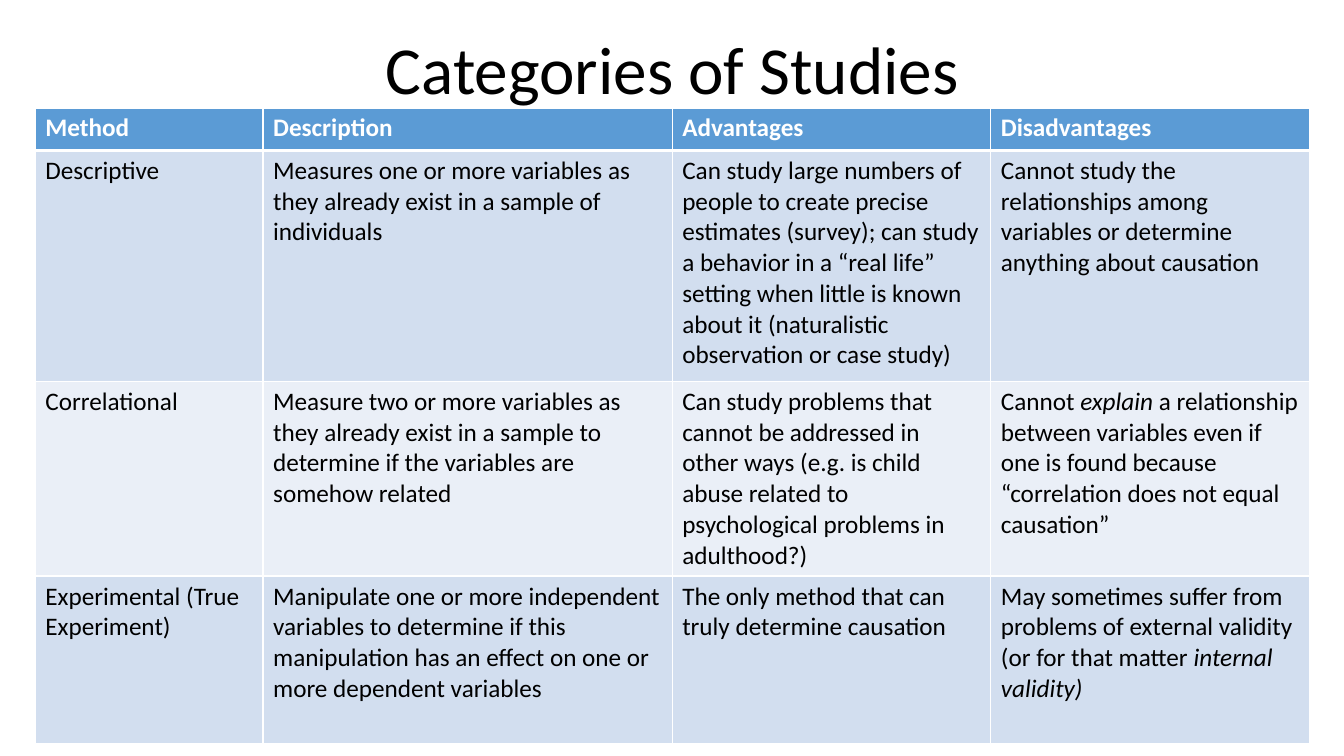
from pptx import Presentation
from pptx.dml.color import RGBColor
from pptx.enum.text import MSO_ANCHOR, MSO_AUTO_SIZE, PP_ALIGN
from pptx.oxml.ns import qn
from pptx.util import Cm, Pt
from lxml import etree

CENTER = PP_ALIGN.CENTER
MIDDLE = MSO_ANCHOR.MIDDLE
NO_AUTOFIT = MSO_AUTO_SIZE.NONE
TITLE_ONLY = 5

COLORS = {
    "text": "000000",
    "white": "FFFFFF",
    "header": "5B9BD5",
    "band_dark": "D2DEEF",
    "band_light": "EAEFF7",
}
COLUMN_WIDTHS = [5.74, 10.31, 8.03, 8.03]
ROW_HEIGHTS = [1.07, 5.82, 4.6, 4.22]
ITALIC_MARK = "*"
STUDIES = [
    ["Method", "Description", "Advantages", "Disadvantages"],
    [
        "Descriptive",
        "Measures one or more variables as they already exist in a sample of individuals",
        "Can study large numbers of people to create precise estimates (survey); "
        "can study a behavior in a “real life” setting when little is known about it "
        "(naturalistic observation or case study)",
        "Cannot study the relationships among variables or determine anything about causation",
    ],
    [
        "Correlational",
        "Measure two or more variables as they already exist in a sample "
        "to determine if the variables are somehow related",
        "Can study problems that cannot be addressed in other ways "
        "(e.g. is child abuse related to psychological problems in adulthood?)",
        "Cannot *explain* a relationship between variables even if one is found "
        "because “correlation does not equal causation”",
    ],
    [
        "Experimental (True Experiment)",
        "Manipulate one or more independent variables to determine if this manipulation "
        "has an effect on one or more dependent variables",
        "The only method that can truly determine causation",
        "May sometimes suffer from problems of external validity "
        "(or for that matter *internal validity)*",
    ],
]


class SlideBuilder:
    def __init__(self, slide, font="Calibri"):
        self.slide = slide
        self.font = font

    def style_span(self, span, size, color, bold=False, italic=False):
        span.font.name = self.font
        span.font.size = Pt(size)
        span.font.color.rgb = RGBColor.from_string(COLORS[color])
        span.font.bold = bold
        span.font.italic = italic

    def title(self, text, left, top, width, height):
        box = self.slide.shapes.title
        box.left, box.top, box.width, box.height = map(Cm, (left, top, width, height))
        frame = box.text_frame
        frame.text = text
        frame.auto_size = NO_AUTOFIT
        frame.vertical_anchor = MIDDLE
        para = frame.paragraphs[0]
        para.alignment = CENTER
        para.line_spacing = 0.9
        self.style_span(para.runs[0], 48, "text")

    def borders(self, cell, bottom_width):
        properties = cell._tc.get_or_add_tcPr()
        widths = {"a:lnL": 1, "a:lnR": 1, "a:lnT": 1, "a:lnB": bottom_width}
        for position, (side, width) in enumerate(widths.items()):
            line = etree.Element(qn(side), w=str(Pt(width)))
            fill = etree.SubElement(line, qn("a:solidFill"))
            etree.SubElement(fill, qn("a:srgbClr"), val=COLORS["white"])
            properties.insert(position, line)

    def cell(self, cell, text, fill, color, bold, bottom_width):
        cell.fill.solid()
        cell.fill.fore_color.rgb = RGBColor.from_string(COLORS[fill])
        self.borders(cell, bottom_width)
        para = cell.text_frame.paragraphs[0]
        for index, part in enumerate(text.split(ITALIC_MARK)):
            if part:
                span = para.add_run()
                span.text = part
                self.style_span(span, 18, color, bold, index % 2 == 1)

    def table(self, rows, left, top, widths, heights):
        frame = self.slide.shapes.add_table(
            len(rows), len(widths), Cm(left), Cm(top), Cm(sum(widths)), Cm(sum(heights))
        )
        table = frame.table
        for column, width in zip(table.columns, widths):
            column.width = Cm(width)
        for row_index, (texts, height) in enumerate(zip(rows, heights)):
            table.rows[row_index].height = Cm(height)
            is_header = row_index == 0
            band = "band_dark" if row_index % 2 else "band_light"
            for column_index, text in enumerate(texts):
                self.cell(
                    table.cell(row_index, column_index),
                    text,
                    fill="header" if is_header else band,
                    color="white" if is_header else "text",
                    bold=is_header,
                    bottom_width=3 if is_header else 1,
                )


def main():
    deck = Presentation()
    deck.slide_width, deck.slide_height = Cm(33.87), Cm(19.05)
    page = SlideBuilder(deck.slides.add_slide(deck.slide_layouts[TITLE_ONLY]))
    page.title("Categories of Studies", 2.34, 0, 29.21, 3.68)
    page.table(STUDIES, 0.89, 2.72, COLUMN_WIDTHS, ROW_HEIGHTS)
    deck.save("out.pptx")


if __name__ == "__main__":
    main()
